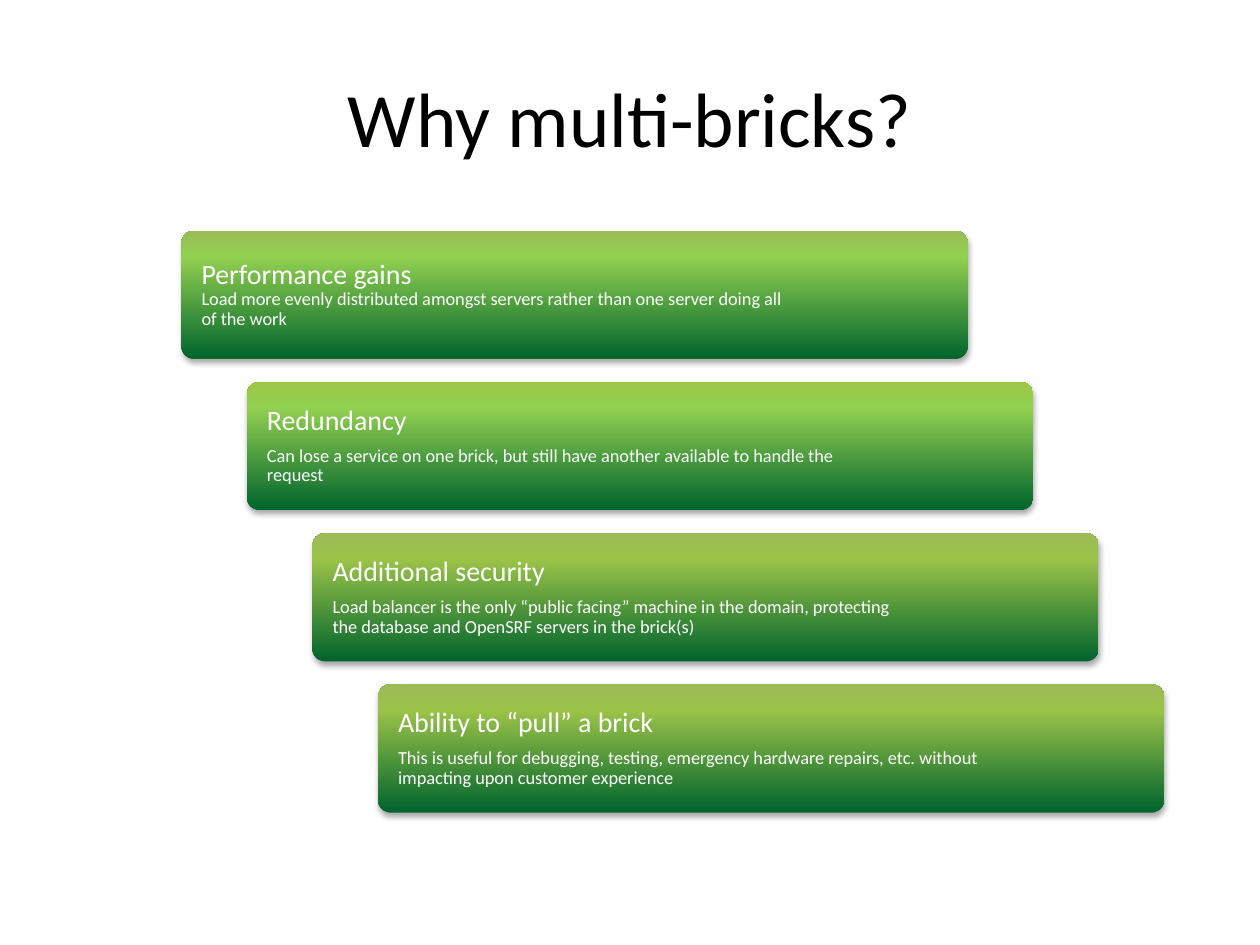
from lxml.etree import SubElement
from pptx import Presentation
from pptx.dml.color import RGBColor
from pptx.enum.shapes import MSO_SHAPE
from pptx.enum.text import MSO_ANCHOR, PP_ALIGN
from pptx.oxml.ns import qn
from pptx.util import Inches, Pt

TITLE = "Why multi-bricks?"
DARK_GREEN = "00642D"
# heading, detail, middle colour, top colour, right inset, detail in the heading's paragraph
CARDS = [
    ("Performance gains",
     "Load more evenly distributed amongst servers rather than one server doing all of the work",
     "92D050", "9BBB59", 1.34, True),
    ("Redundancy",
     "Can lose a service on one brick, but still have another available to handle the request",
     "92D050", "9DC746", 1.44, False),
    ("Additional security",
     "Load balancer is the only “public facing” machine in the domain, protecting the database "
     "and OpenSRF servers in the brick(s)",
     "9BC348", "9BBB59", 1.43, False),
    ("Ability to “pull” a brick",
     "This is useful for debugging, testing, emergency hardware repairs, etc. without impacting "
     "upon customer experience",
     "9BC348", "9BBB59", 1.44, False),
]
LEFT, TOP, WIDTH, HEIGHT = 1.44, 1.83, 6.24, 1.02
STEP_X, STEP_Y = 0.52, 1.2


def color(value):
    return RGBColor.from_string(value)


def add_text(para, text, size, fill="FFFFFF", font="Calibri"):
    span = para.add_run()
    span.text = text
    span.font.name = font
    span.font.size = Pt(size)
    span.font.color.rgb = color(fill)


def format_card_paragraph(para, size):
    para.alignment = PP_ALIGN.LEFT
    para.line_spacing = 0.9
    para.space_after = Pt(0.35 * size)


def fill_upward(shape, stops):
    """Fill with a gradient from bottom to top; stops are (percent, colour)."""
    shape.fill.gradient()
    shape.fill.gradient_angle = 90
    stop_list = shape._element.spPr.find(qn("a:gradFill")).find(qn("a:gsLst"))
    for old_stop in list(stop_list):
        stop_list.remove(old_stop)
    for percent, value in stops:
        stop = SubElement(stop_list, qn("a:gs"), pos=str(percent * 1000))
        SubElement(stop, qn("a:srgbClr"), val=value)


def add_shadow(shape):
    """Add a soft black shadow straight below the shape."""
    shape.shadow.inherit = False
    effects = shape._element.spPr.find(qn("a:effectLst"))
    shadow = SubElement(effects, qn("a:outerShdw"), blurRad=str(Pt(3.1)), dist=str(Pt(1.8)),
                        dir="5400000", rotWithShape="0")
    black = SubElement(shadow, qn("a:srgbClr"), val="000000")
    SubElement(black, qn("a:alpha"), val="35000")


def add_card(page, index, heading, detail, middle, top, right_inset, joined):
    card = page.shapes.add_shape(
        MSO_SHAPE.ROUNDED_RECTANGLE, Inches(LEFT + index * STEP_X), Inches(TOP + index * STEP_Y),
        Inches(WIDTH), Inches(HEIGHT))
    card.adjustments[0] = 0.1
    card.line.fill.background()
    fill_upward(card, [(0, DARK_GREEN), (80, middle), (100, top)])
    add_shadow(card)

    frame = card.text_frame
    frame.word_wrap = True
    frame.vertical_anchor = MSO_ANCHOR.MIDDLE
    frame.margin_left = frame.margin_top = frame.margin_bottom = Inches(0.13)
    frame.margin_right = Inches(right_inset)
    para = frame.paragraphs[0]
    format_card_paragraph(para, 16)
    add_text(para, heading, 16)
    if joined:
        para.add_line_break()
    else:
        para = frame.add_paragraph()
        format_card_paragraph(para, 10.5)
    add_text(para, detail, 10.5)


def main():
    deck = Presentation()
    deck.slide_width, deck.slide_height = Inches(10), Inches(7.5)
    page = deck.slides.add_slide(deck.slide_layouts[5])

    title = page.shapes.title
    title.left, title.top = Inches(0.5), Inches(0.3)
    title.width, title.height = Inches(9), Inches(1.25)
    title.text_frame.vertical_anchor = MSO_ANCHOR.MIDDLE
    para = title.text_frame.paragraphs[0]
    para.alignment = PP_ALIGN.CENTER
    add_text(para, TITLE, 44, fill="000000")

    for index, card in enumerate(CARDS):
        add_card(page, index, *card)
    deck.save("out.pptx")


if __name__ == "__main__":
    main()
